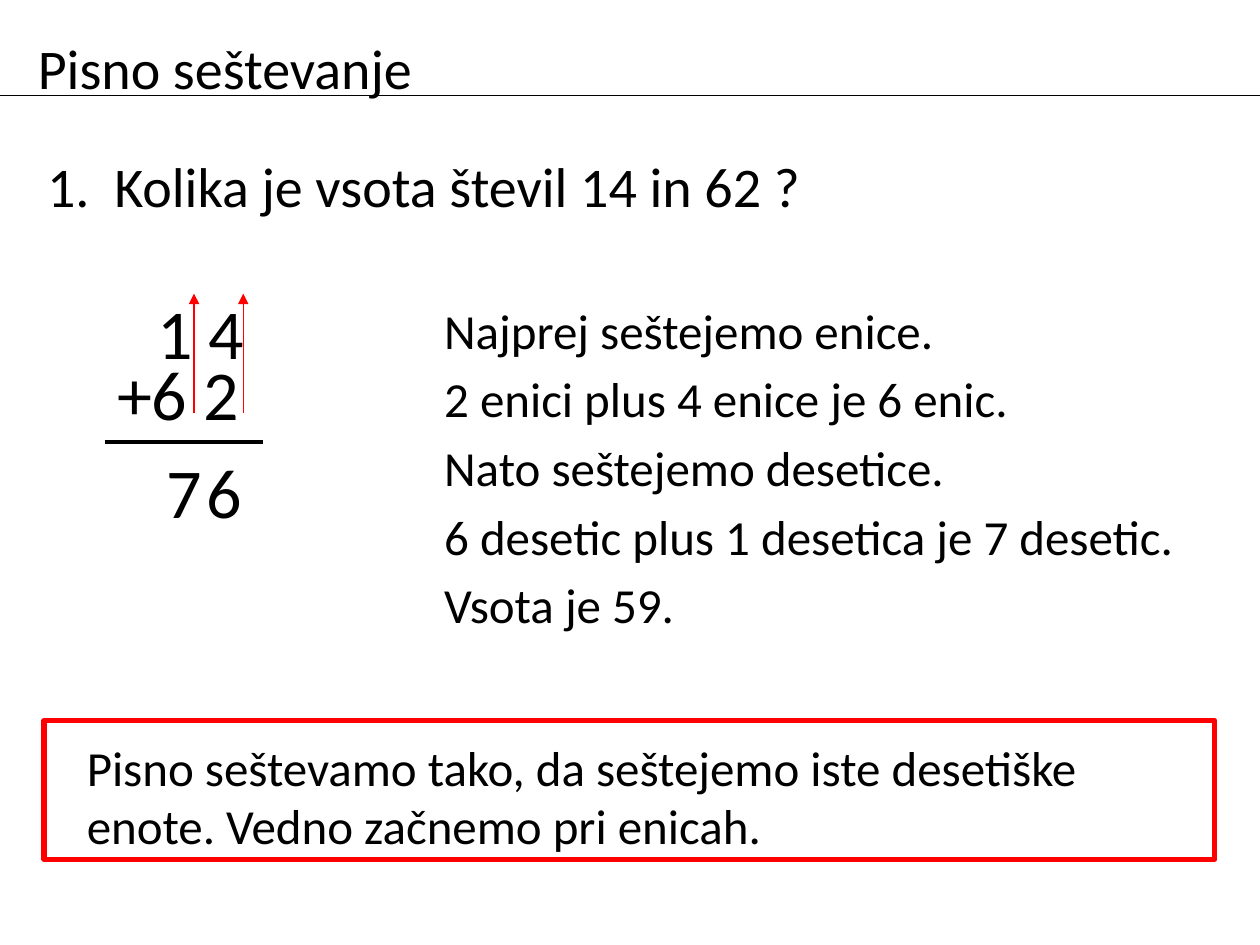
import pptx
import pptx.util
import pptx.dml.color
import pptx.enum.shapes
import pptx.enum.text
import pptx.oxml.ns
from lxml import etree

Pt = pptx.util.Pt
COLORS = {"text": "000000", "accent": "FF0000"}
FONT = "Calibri"

TITLE = "Pisno seštevanje"
QUESTION = "Kolika je vsota števil 14 in 62 ?"
STEPS = [
    "Najprej seštejemo enice.",
    "2 enici plus 4 enice je 6 enic.",
    "Nato seštejemo desetice.",
    "6 desetic plus 1 desetica je 7 desetic.",
    "Vsota je 59.",
]
RULE = "Pisno seštevamo tako, da seštejemo iste desetiške enote. Vedno začnemo pri enicah."
SUM_PARTS = [
    ("1 4", (83, 162, 78, 51)),
    ("+6 2", (59.8, 196.5, 96.5, 40)),
    ("7", (87.8, 252.7, 40, 57)),
    ("6", (110.9, 252.7, 40, 57)),
]
LINES = [
    ((59.8, 252.7), (150.5, 252.7), "text", 2.25, False),
    ((139, 236.2), (139, 167.8), "accent", 0.75, True),
    ((110.9, 236.2), (110.9, 167.8), "accent", 0.75, True),
    ((0, 54.7), (720, 54.7), "text", 0.75, False),
]


def rgb(name):
    return pptx.dml.color.RGBColor.from_string(COLORS[name])


def add_child(parent, tag, **attributes):
    return etree.SubElement(parent, pptx.oxml.ns.qn(tag), **attributes)


def write(holder, text, box, size=28, bullet="a:buNone", hanging=0, **bullet_attributes):
    holder.left, holder.top, holder.width, holder.height = map(Pt, box)
    frame = holder.text_frame
    frame.word_wrap = True
    frame.auto_size = pptx.enum.text.MSO_AUTO_SIZE.NONE
    frame.vertical_anchor = pptx.enum.text.MSO_ANCHOR.TOP
    frame.text = text
    for index, paragraph in enumerate(frame.paragraphs):
        properties = paragraph._p.get_or_add_pPr()
        properties.set("marL", str(Pt(hanging)))
        properties.set("indent", str(-Pt(hanging)))
        add_child(properties, bullet, **bullet_attributes)
        paragraph.alignment = pptx.enum.text.PP_ALIGN.LEFT
        paragraph.space_before = Pt(0.2 * size if index else 0)
        paragraph.font.size = Pt(size)
        paragraph.font.name = FONT
        paragraph.font.color.rgb = rgb("text")


def add_text(slide, text, box, **text_format):
    write(slide.shapes.add_textbox(0, 0, 0, 0), text, box, **text_format)


def add_line(slide, start, end, color, width, arrow):
    connector = slide.shapes.add_connector(
        pptx.enum.shapes.MSO_CONNECTOR.STRAIGHT, *map(Pt, start + end))
    connector.line.color.rgb = rgb(color)
    connector.line.width = Pt(width)
    if arrow:
        add_child(connector.line._get_or_add_ln(), "a:tailEnd", type="triangle")
    add_child(connector._element.spPr, "a:effectLst")


def main():
    deck = pptx.Presentation()
    deck.slide_width, deck.slide_height = Pt(720), Pt(540)
    slide = deck.slides.add_slide(deck.slide_layouts[1])

    write(slide.shapes.title, TITLE, (14.4, 15.5, 504, 57), size=32)
    add_text(slide, QUESTION, (19.8, 83, 686, 40), size=32,
             bullet="a:buAutoNum", hanging=38.4, type="arabicPeriod")
    for digits, box in SUM_PARTS:
        add_text(slide, digits, box, size=40)
    write(slide.placeholders[1], "\n".join(STEPS), (246.6, 168, 454, 200))
    for line in LINES:
        add_line(slide, *line)

    add_text(slide, RULE, (42.5, 417.6, 646.5, 74))
    frame = slide.shapes.add_shape(
        pptx.enum.shapes.MSO_SHAPE.RECTANGLE, *map(Pt, (25.2, 411.8, 669, 79.2)))
    frame.shadow.inherit = False
    frame.fill.background()
    frame.line.color.rgb = rgb("accent")
    frame.line.width = Pt(3)

    deck.save("out.pptx")


if __name__ == "__main__":
    main()
